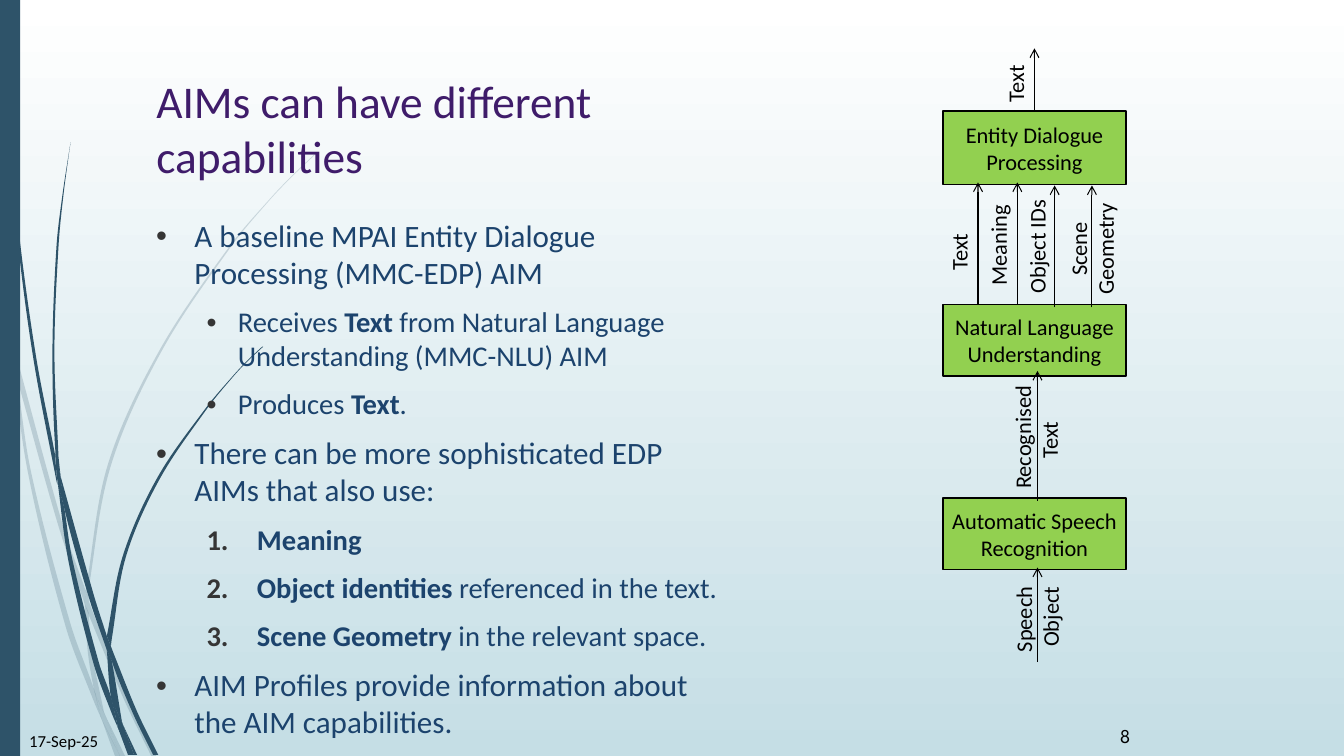
from math import dist

from lxml import etree
from pptx import Presentation
from pptx.dml.color import RGBColor
from pptx.enum.shapes import MSO_CONNECTOR, MSO_SHAPE
from pptx.enum.text import MSO_ANCHOR, PP_ALIGN
from pptx.oxml.ns import qn
from pptx.util import Pt

STRAIGHT = MSO_CONNECTOR.STRAIGHT
RECTANGLE = MSO_SHAPE.RECTANGLE
TOP, MIDDLE = MSO_ANCHOR.TOP, MSO_ANCHOR.MIDDLE
LEFT, CENTER = PP_ALIGN.LEFT, PP_ALIGN.CENTER
TITLE_ONLY = 5
PX = 9144
FONT = "Calibri"
BLACK, NAVY, PURPLE, TEAL = "000000", "1C436D", "3F1C6A", "2E5369"
GREEN, BULLET_GREY = "92D050", "353535"

PALE_WISPS = [
    ([(11, 350), (9, 322), (0, 282)], [(0, 299), (10, 344)]),
    ([(14, 345), (62, 520), (85, 586)], [(84, 599), (58, 522), (17, 376)]),
    ([(88, 596), (92, 607), (127, 692), (155, 750)], [(150, 750), (123, 694), (88, 610)]),
    ([(105, 711), (119, 750)], [(124, 750)]),
    ([(11, 350), (28, 470), (65, 621), (92, 693), (101, 714)],
     [(99, 707), (93, 683), (70, 619), (31, 469), (17, 376)]),
    ([(84, 599), (87, 646), (93, 683), (96, 692), (105, 711)],
     [(103, 706), (91, 646), (88, 610), (88, 608)]),
    ([(312, 153), (289, 175), (268, 197), (228, 244), (158, 348), (107, 461), (85, 586)],
     [(88, 596), (88, 584), (110, 462), (160, 349), (229, 245), (268, 198), (290, 175), (312, 154)]),
    ([(101, 714), (114, 750)], [(119, 750)]),
    ([(85, 586), (84, 599)], [(88, 610), (88, 596)]),
    ([(93, 683), (99, 707), (101, 714), (119, 750)], [(105, 711), (96, 692)]),
]
DARK_WISPS = [
    ([(3, 0), (4, 48), (7, 110), (17, 233), (33, 355), (56, 477), (57, 481)],
     [(55, 457), (55, 453), (36, 355), (19, 232), (8, 109), (5, 48), (4, 0)]),
    ([(60, 472), (64, 505), (88, 592), (106, 645)], [(106, 631), (93, 590), (60, 472)]),
    ([(110, 641), (111, 656), (132, 708), (152, 749)], [(157, 749), (136, 706), (113, 649)]),
    ([(57, 477), (68, 557), (93, 659), (111, 708), (117, 722)],
     [(116, 717), (110, 691), (98, 657), (72, 556), (64, 505)]),
    ([(70, 141), (62, 193), (56, 245), (52, 349), (55, 449), (60, 472)],
     [(58, 453), (54, 349), (58, 245), (63, 193), (70, 141)]),
    ([(122, 719), (133, 749)], [(136, 749)]),
    ([(55, 449), (55, 453), (57, 477), (64, 505)], [(60, 472)]),
    ([(260, 344), (245, 358), (231, 373), (204, 405), (156, 474), (122, 551), (106, 631)],
     [(110, 641), (111, 633), (125, 552), (158, 476), (205, 406), (231, 374), (245, 359), (261, 344)]),
    ([(117, 722), (127, 749)], [(131, 749)]),
    ([(106, 645), (110, 691), (116, 706), (122, 719)], [(121, 716), (111, 656), (109, 651)]),
    ([(106, 631), (106, 645)], [(111, 656), (110, 641)]),
    ([(110, 691), (116, 717), (117, 722), (130, 749)], [(133, 749), (122, 719), (116, 706)]),
]

TOPIC = (22.2, 38, -38, "•")
DETAIL = (20.4, 81, -31, "•")
NUMBERED = (20.4, 100, -50, None)
BODY = [
    (TOPIC, [("A baseline MPAI Entity Dialogue Processing (MMC-EDP) AIM", False)]),
    (DETAIL, [("Receives ", False), ("Text", True),
              (" from Natural Language Understanding (MMC-NLU) AIM", False)]),
    (DETAIL, [("Produces ", False), ("Text", True), (".", False)]),
    (TOPIC, [("There can be more sophisticated EDP AIMs that also use:", False)]),
    (NUMBERED, [("Meaning", True)]),
    (NUMBERED, [("Object identities", True), (" referenced in the text.", False)]),
    (NUMBERED, [("Scene Geometry", True), (" in the relevant space.", False)]),
    (TOPIC, [("AIM Profiles provide information about the AIM capabilities.", False)]),
]
MODULES = [
    ("Entity Dialogue Processing", 110, 73),
    ("Natural Language Understanding", 302, 71),
    ("Automatic Speech Recognition", 494, 71),
]
ARROWS = [(1026, 109, 48), (970, 302, 181), (1009, 302, 181), (1046, 305, 184),
          (1083, 305, 184), (1029, 497, 368), (1029, 657, 563)]
LABELS = [
    (["Text "], 978, 62, 58, 37),
    (["Text "], 906, 229, 90, 37),
    (["Meaning"], 934, 225, 112, 37),
    (["Object IDs"], 971, 226, 115, 37),
    (["Scene Geometry"], 1019, 215, 128, 64),
    (["Recognised", "Text "], 955, 402, 145, 64),
    (["Speech ", "Object"], 984, 580, 89, 64),
]


def color(hex_string):
    return RGBColor.from_string(hex_string)


def px(*lengths):
    return [round(length * PX) for length in lengths]


def add_run(paragraph, text, size, hex_string, bold=False, font=FONT):
    run = paragraph.add_run()
    run.text = text
    run.font.name = font
    run.font.size = Pt(size)
    run.font.bold = bold
    run.font.color.rgb = color(hex_string)


def format_frame(frame, side=10, top=5, bottom=5, anchor=TOP):
    frame.word_wrap = True
    frame.vertical_anchor = anchor
    frame.margin_left = frame.margin_right = side * PX
    frame.margin_top, frame.margin_bottom = px(top, bottom)


def slope(before, here, after):
    length = dist(before, here) + dist(here, after)
    return [(b - a) / length for a, b in zip(before, after)]


def curve_points(points):
    padded = [points[0], *points, points[-1]]
    slopes = [slope(*trio) for trio in zip(padded, points, padded[2:])] if points[1:] else []
    curve = []
    for start, end, leave, arrive in zip(points, points[1:], slopes, slopes[1:]):
        third = dist(start, end) / 3
        curve += [[p + m * third for p, m in zip(start, leave)],
                  [p - m * third for p, m in zip(end, arrive)], end]
    return curve


def add_wisp(slide, edges, opacity):
    first, second = edges
    joint = [first[-1], second[0], second[0]]
    outline = [first[0], *curve_points(first), *joint, *curve_points(second)]
    outline = [px(*point) for point in outline]
    builder = slide.shapes.build_freeform(*outline[0], scale=1.0)
    builder.add_line_segments(outline[1:], close=True)
    shape = builder.convert_to_shape()
    lines = list(shape._element.iter(qn("a:lnTo")))
    for trio in zip(lines[::3], lines[1::3], lines[2::3]):
        bezier = etree.Element(qn("a:cubicBezTo"))
        trio[0].addprevious(bezier)
        for line in trio:
            bezier.append(line[0])
            line.getparent().remove(line)
    shape.shadow.inherit = False
    shape.fill.solid()
    shape.fill.fore_color.rgb = color(TEAL)
    shape.line.fill.background()
    if opacity < 100:
        solid = shape.fill._xPr.find(qn("a:solidFill"))
        etree.SubElement(solid[0], qn("a:alpha"), val=str(opacity * 1000))


def add_rectangle(slide, x, y, width, height, fill, outline=None):
    shape = slide.shapes.add_shape(RECTANGLE, *px(x, y, width, height))
    shape.shadow.inherit = False
    shape.fill.solid()
    shape.fill.fore_color.rgb = color(fill)
    if outline:
        shape.line.color.rgb = color(outline)
        shape.line.width = Pt(1.25)
    else:
        shape.line.fill.background()
    return shape


def add_module(slide, name, y, height):
    shape = add_rectangle(slide, 935, y, 182, height, GREEN, BLACK)
    format_frame(shape.text_frame, side=5, anchor=MIDDLE)
    paragraph = shape.text_frame.paragraphs[0]
    paragraph.alignment = CENTER
    add_run(paragraph, name, 16, BLACK)


def add_arrow(slide, x, bottom, top):
    arrow = slide.shapes.add_connector(STRAIGHT, *px(x, bottom, x, top))
    arrow.line.color.rgb = color(BLACK)
    arrow.line.width = Pt(0.75)
    etree.SubElement(arrow.line._get_or_add_ln(), qn("a:tailEnd"), type="arrow")
    etree.SubElement(arrow._element.spPr, qn("a:effectLst"))


def add_label(slide, lines, x, y, width, height):
    box = slide.shapes.add_textbox(*px(x, y, width, height))
    box.rotation = 270
    frame = box.text_frame
    format_frame(frame, side=5)
    for index, line in enumerate(lines):
        paragraph = frame.add_paragraph() if index else frame.paragraphs[0]
        paragraph.alignment = CENTER
        add_run(paragraph, line, 16, BLACK)


def add_footer(slide, text, x, y, width, height, size, font, top):
    box = slide.shapes.add_textbox(*px(x, y, width, height))
    format_frame(box.text_frame, top=top, bottom=0)
    add_run(box.text_frame.paragraphs[0], text, size, BLACK, font=font)


def set_bullet(paragraph, margin, indent, symbol):
    properties = paragraph._p.get_or_add_pPr()
    properties.set("marL", str(margin * PX))
    properties.set("indent", str(indent * PX))
    bullet_color = etree.SubElement(properties, qn("a:buClr"))
    etree.SubElement(bullet_color, qn("a:srgbClr"), val=BULLET_GREY)
    if symbol:
        etree.SubElement(properties, qn("a:buFont"), typeface="Arial")
        etree.SubElement(properties, qn("a:buChar"), char=symbol)
    else:
        etree.SubElement(properties, qn("a:buAutoNum"), type="arabicPeriod")


def add_body(slide):
    frame = slide.shapes.add_textbox(*px(145, 208, 582, 498)).text_frame
    format_frame(frame, top=8)
    for index, ((size, margin, indent, symbol), runs) in enumerate(BODY):
        paragraph = frame.add_paragraph() if index else frame.paragraphs[0]
        set_bullet(paragraph, margin, indent, symbol)
        paragraph.line_spacing = 0.99
        paragraph.space_before = Pt(10 if index else 0)
        for text, bold in runs:
            add_run(paragraph, text, size, NAVY, bold)


def set_title(slide):
    title = slide.shapes.title
    title.left, title.top, title.width, title.height = px(145, 68, 553, 140)
    format_frame(title.text_frame)
    paragraph = title.text_frame.paragraphs[0]
    paragraph.alignment = LEFT
    add_run(paragraph, "AIMs can have different", 32.4, PURPLE)
    paragraph.add_line_break()
    add_run(paragraph, "capabilities", 32.4, PURPLE)


def set_background(slide):
    fill = slide.background.fill
    fill.gradient()
    fill.gradient_angle = 270
    for stop, hex_string in zip(fill.gradient_stops, ("FFFFFF", "C5DEE5")):
        stop.color.rgb = color(hex_string)


def main():
    presentation = Presentation()
    presentation.slide_width, presentation.slide_height = px(1333, 750)
    slide = presentation.slides.add_slide(presentation.slide_layouts[TITLE_ONLY])
    set_background(slide)
    for wisps, opacity in ((PALE_WISPS, 20), (DARK_WISPS, 100)):
        for edges in wisps:
            add_wisp(slide, edges, opacity)
    add_rectangle(slide, 0, 0, 20, 750, TEAL)
    set_title(slide)
    add_body(slide)
    add_footer(slide, "17-Sep-25", 19, 720, 109, 30, 12, FONT, 5)
    add_footer(slide, "8", 1101, 718, 61, 30, 14, "League Spartan", 0)
    for add_part, parts in ((add_module, MODULES), (add_arrow, ARROWS), (add_label, LABELS)):
        for part in parts:
            add_part(slide, *part)
    presentation.save("out.pptx")


if __name__ == "__main__":
    main()
